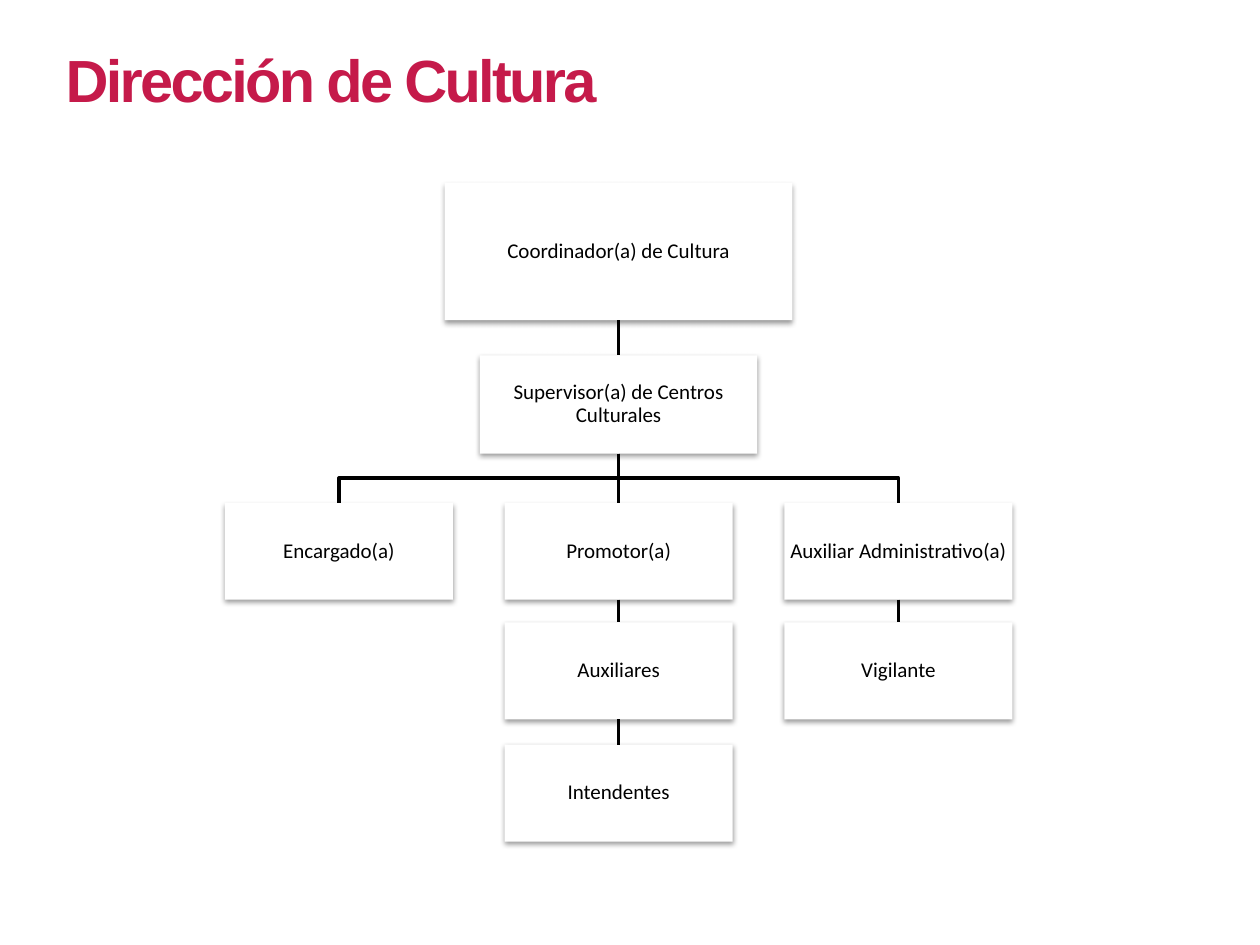
from lxml.etree import SubElement
from pptx import Presentation
from pptx.dml.color import RGBColor
from pptx.enum.shapes import MSO_CONNECTOR, MSO_SHAPE
from pptx.enum.text import MSO_ANCHOR, PP_ALIGN
from pptx.oxml.ns import qn
from pptx.util import Inches, Pt

TOP, BOTTOM = 0, 2  # connection sites of a rectangle
INK = "000000"
CENTRE, COLUMN_STEP = 4.91, 2.22
POST_SIZE = (1.81, 0.77)

# key: (label, column, top, (width, height))
POSTS = {
    "coordinador": ("Coordinador(a) de Cultura", 0, 1.45, (2.76, 1.09)),
    "supervisor": ("Supervisor(a) de Centros Culturales", 0, 2.82, (2.2, 0.78)),
    "encargado": ("Encargado(a)", -1, 3.99, POST_SIZE),
    "promotor": ("Promotor(a)", 0, 3.99, POST_SIZE),
    "administrativo": ("Auxiliar Administrativo(a)", 1, 3.99, POST_SIZE),
    "auxiliares": ("Auxiliares", 0, 4.94, POST_SIZE),
    "vigilante": ("Vigilante", 1, 4.94, POST_SIZE),
    "intendentes": ("Intendentes", 0, 5.91, POST_SIZE),
}
REPORTS = [
    ("coordinador", "supervisor"),
    ("supervisor", "encargado"),
    ("supervisor", "promotor"),
    ("supervisor", "administrativo"),
    ("promotor", "auxiliares"),
    ("auxiliares", "intendentes"),
    ("administrativo", "vigilante"),
]


def colour(hex_value):
    return RGBColor.from_string(hex_value)


def write(frame, text, *, font, size, ink=INK, bold=False, align=PP_ALIGN.LEFT,
          anchor=MSO_ANCHOR.MIDDLE, line_spacing=1.0, tracking=None, inset=None):
    frame.word_wrap = True
    frame.vertical_anchor = anchor
    if inset is not None:
        frame.margin_left = frame.margin_right = Inches(inset)
        frame.margin_top = frame.margin_bottom = Inches(inset)
    paragraph = frame.paragraphs[0]
    paragraph.alignment = align
    paragraph.line_spacing = line_spacing
    run = paragraph.add_run()
    run.text = text
    run.font.name = font
    run.font.size = Pt(size)
    run.font.bold = bold
    run.font.color.rgb = colour(ink)
    if tracking is not None:
        run.font._element.set("spc", str(int(tracking * 100)))


def add_soft_shadow(shape):
    shape.shadow.inherit = False
    effects = shape._element.spPr.find(qn("a:effectLst"))
    shadow = SubElement(effects, qn("a:outerShdw"), blurRad=str(Pt(3.1)),
                        dist=str(Pt(1.6)), dir="5400000", rotWithShape="0")
    black = SubElement(shadow, qn("a:srgbClr"), val=INK)
    SubElement(black, qn("a:alpha"), val="38000")


def add_post(slide, label, left, top, width, height):
    post = slide.shapes.add_shape(MSO_SHAPE.RECTANGLE, Inches(left), Inches(top),
                                  Inches(width), Inches(height))
    post.fill.solid()
    post.fill.fore_color.rgb = colour("FFFFFF")
    post.line.fill.background()
    add_soft_shadow(post)
    write(post.text_frame, label, font="Calibri", size=12, align=PP_ALIGN.CENTER,
          line_spacing=0.9, inset=0.01)
    return post


def add_report_line(slide, boss, report):
    """Join boss to report: straight in one column, bent halfway across columns."""
    start_x, end_x = (post.left + post.width // 2 for post in (boss, report))
    start_y, end_y = boss.top + boss.height, report.top
    if abs(start_x - end_x) < Inches(0.01):
        link = slide.shapes.add_connector(MSO_CONNECTOR.STRAIGHT,
                                          start_x, start_y, end_x, end_y)
        link.begin_connect(boss, BOTTOM)
        link.end_connect(report, TOP)
        SubElement(link._element.spPr, qn("a:effectLst"))
    else:
        bend_y = (start_y + end_y) // 2
        outline = slide.shapes.build_freeform(start_x, start_y)
        outline.add_line_segments(
            [(start_x, bend_y), (end_x, bend_y), (end_x, end_y)], close=False)
        link = outline.convert_to_shape()
        link.fill.background()
        link.shadow.inherit = False
    link.line.color.rgb = colour(INK)
    link.line.width = Pt(2)


def add_title(slide, text, left, top, width, height):
    title = slide.shapes.title
    title.left, title.top = Inches(left), Inches(top)
    title.width, title.height = Inches(width), Inches(height)
    write(title.text_frame, text, font="Arial", size=34, ink="C51A4A", bold=True,
          anchor=MSO_ANCHOR.TOP, tracking=-1.5)


def add_org_chart(slide, centre, column_step):
    posts = {}
    for key, (label, column, top, (width, height)) in POSTS.items():
        left = centre + column * column_step - width / 2
        posts[key] = add_post(slide, label, left, top, width, height)
    for boss, report in REPORTS:
        add_report_line(slide, posts[boss], posts[report])


def main():
    deck = Presentation()
    deck.slide_width, deck.slide_height = Inches(10), Inches(7.5)
    slide = deck.slides.add_slide(deck.slide_layouts.get_by_name("Title Only"))
    add_title(slide, "Dirección de Cultura", 0.42, 0.29, 6.81, 0.69)
    add_org_chart(slide, CENTRE, COLUMN_STEP)
    deck.save("out.pptx")


if __name__ == "__main__":
    main()
